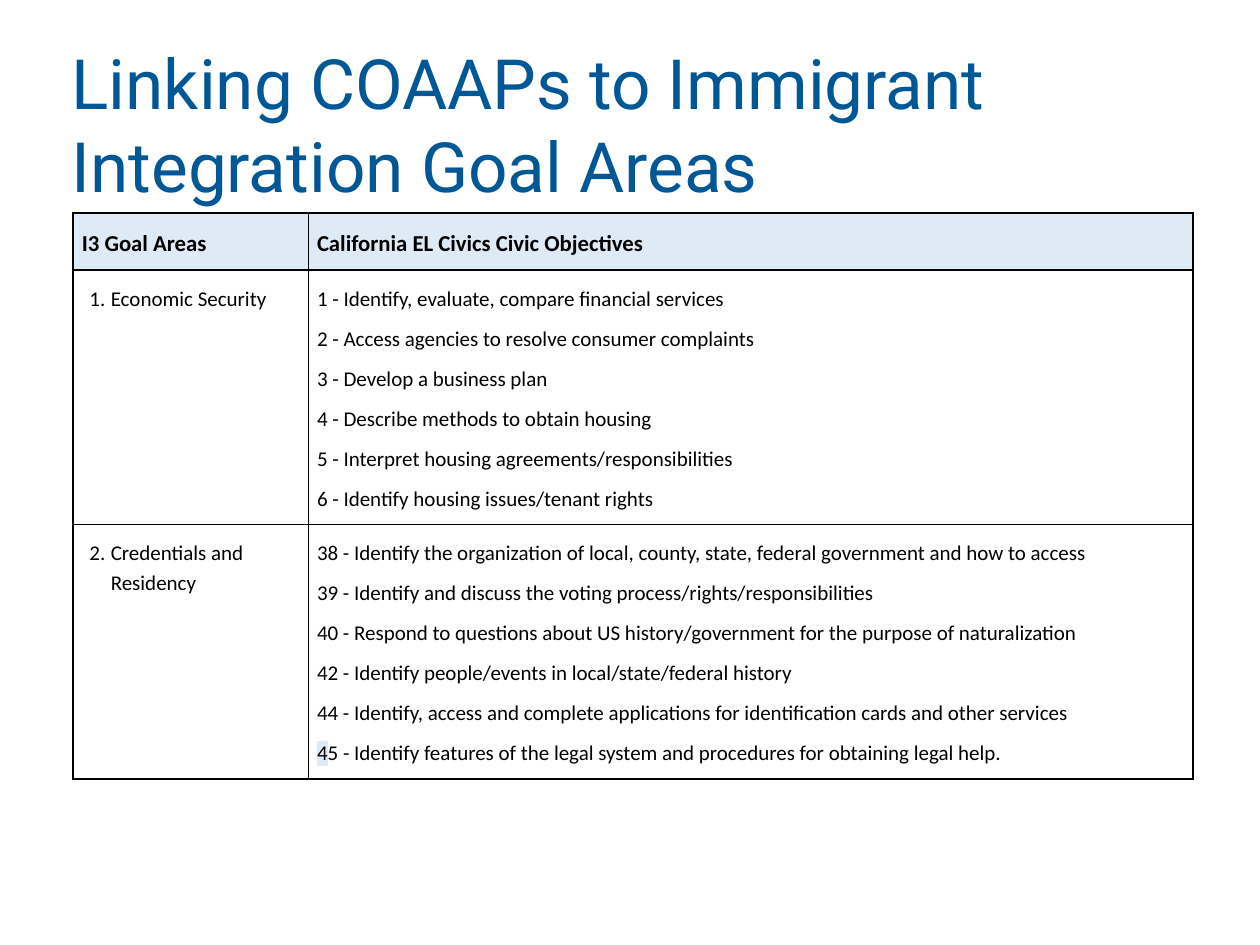
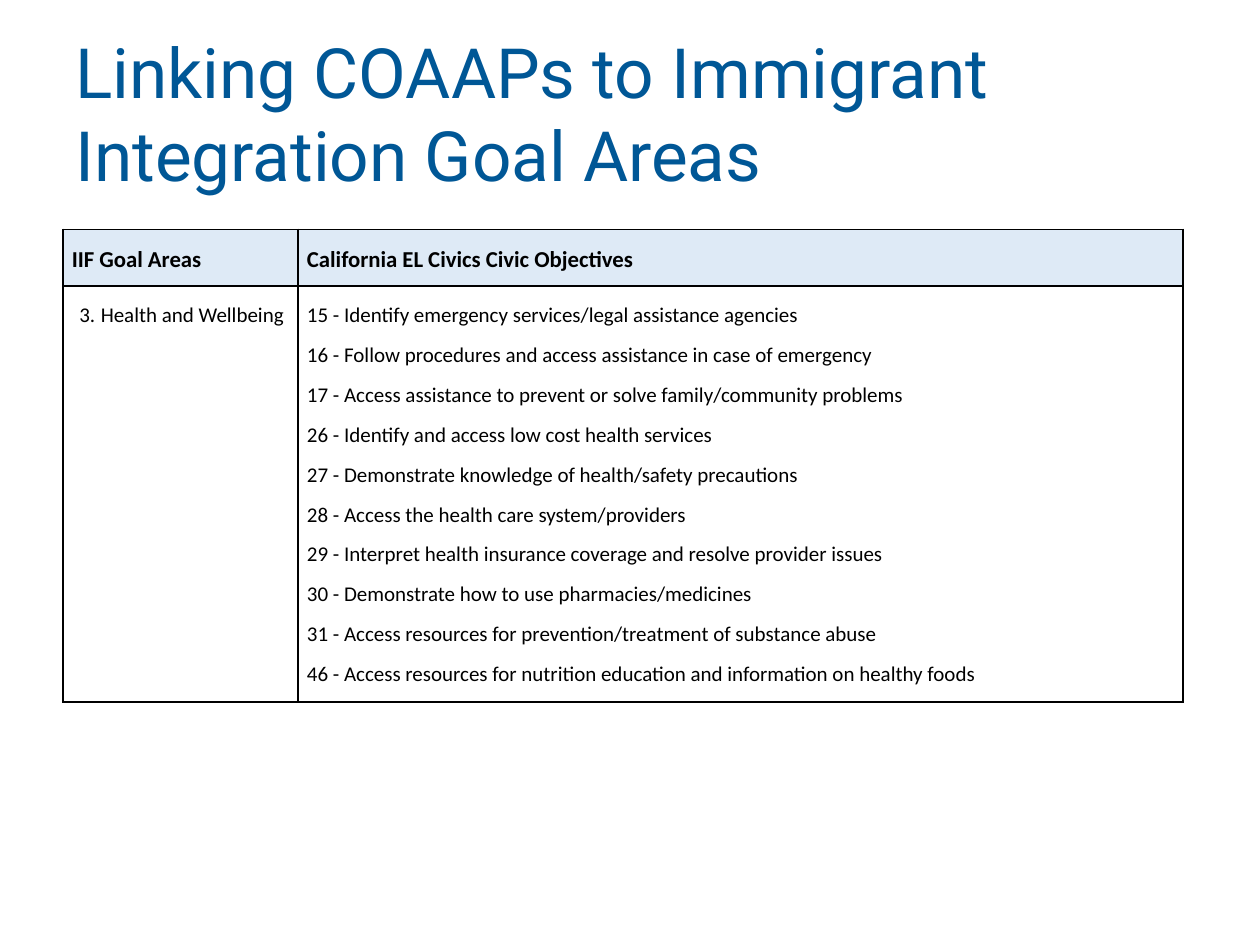
import pptx
import pptx.dml.color
import pptx.enum.text
import pptx.oxml
import pptx.oxml.ns
import pptx.util
from collections import namedtuple
from dataclasses import dataclass

Pt = pptx.util.Pt
qn = pptx.oxml.ns.qn
Box = namedtuple("Box", "left top width height")


@dataclass(frozen=True)
class Theme:
    title_color: str = "005796"
    text_color: str = "000000"
    tint: str = "DEEAF6"
    title_font: str = "Roboto"
    body_font: str = "Calibri"
    title_size: float = 39.6
    header_size: float = 13
    body_size: float = 12
    border: float = 1


THEME = Theme()
TITLE = "Linking COAAPs to Immigrant Integration Goal Areas"
OBJECTIVES_HEADER = "California EL Civics Civic Objectives"

# Lengths are in hundredths of the slide's width.
GOAL_SHARE = 0.21
HEADER_ROW, LINE_PITCH, ROW_PADDING = 4.5, 3.2, 1
TITLE_INSET = (1, 1, 1, 1)
CELL_INSET = (0.7, 1, 0.7, 1)
LIST_INDENT, LIST_HANG = 2.3, 1.7

SLIDES = [
    dict(
        title_box=Box(4.7, 2.2, 90, 8.8),
        table_box=Box(5.8, 16.9, 88.9, 44.7),
        goal_header="I3 Goal Areas",
        tinted="45",
        goals=[
            ("1.", "Economic Security", [
                "1 - Identify, evaluate, compare financial services",
                "2 - Access agencies to resolve consumer complaints",
                "3 - Develop a business plan",
                "4 - Describe methods to obtain housing",
                "5 - Interpret housing agreements/responsibilities",
                "6 - Identify housing issues/tenant rights",
            ]),
            ("2.", "Credentials and Residency", [
                "38 - Identify the organization of local, county, state, federal government and how to access",
                "39 - Identify and discuss the voting process/rights/responsibilities",
                "40 - Respond to questions about US history/government for the purpose of naturalization",
                "42 - Identify people/events in local/state/federal history",
                "44 - Identify, access and complete applications for identification cards and other services",
                "45 - Identify features of the legal system and procedures for obtaining legal help.",
            ]),
        ],
    ),
    dict(
        title_box=Box(5, 1.3, 90, 11.7),
        table_box=Box(5, 18.2, 88.9, 37),
        goal_header="IIF Goal Areas",
        tinted=None,
        goals=[
            ("3.", "Health and Wellbeing", [
                "15 - Identify emergency services/legal assistance agencies",
                "16 - Follow procedures and access assistance in case of emergency",
                "17 - Access assistance to prevent or solve family/community problems",
                "26 - Identify and access low cost health services",
                "27 - Demonstrate knowledge of health/safety precautions",
                "28 - Access the health care system/providers",
                "29 - Interpret health insurance coverage and resolve provider issues",
                "30 - Demonstrate how to use pharmacies/medicines",
                "31 - Access resources for prevention/treatment of substance abuse",
                "46 - Access resources for nutrition education and information on healthy foods",
            ]),
        ],
    ),
]


def units(n):
    return pptx.util.Inches(n / 10)


def rgb(value):
    return pptx.dml.color.RGBColor.from_string(value)


def set_attrs(target, **values):
    for name, value in values.items():
        setattr(target, name, value)


def set_insets(target, insets):
    sides = ("margin_left", "margin_top", "margin_right", "margin_bottom")
    set_attrs(target, **{side: units(n) for side, n in zip(sides, insets)})


def add_run(p, text, font, size, color, bold=False):
    r = p.add_run()
    r.text = text
    set_attrs(r.font, name=font, size=Pt(size), bold=bold)
    r.font.color.rgb = rgb(color)
    return r


def add_body_run(p, text, size=THEME.body_size, bold=False):
    return add_run(p, text, THEME.body_font, size, THEME.text_color, bold)


def highlight(r, color):
    mark = pptx.oxml.parse_xml(
        f'<a:highlight {pptx.oxml.ns.nsdecls("a")}><a:srgbClr val="{color}"/></a:highlight>')
    r.font._element.find(qn("a:solidFill")).addnext(mark)


def add_title(slide, box):
    sp = slide.shapes.add_textbox(*map(units, box))
    tf = sp.text_frame
    set_attrs(tf, word_wrap=True, vertical_anchor=pptx.enum.text.MSO_ANCHOR.TOP)
    set_insets(tf, TITLE_INSET)
    add_run(tf.paragraphs[0], TITLE, THEME.title_font, THEME.title_size, THEME.title_color)


def style_cell(cell, fill=None):
    set_insets(cell, CELL_INSET)
    if fill:
        cell.fill.solid()
        cell.fill.fore_color.rgb = rgb(fill)
    else:
        cell.fill.background()
    tcPr = cell._tc.get_or_add_tcPr()
    for i, side in enumerate("LRTB"):
        tcPr.insert(i, pptx.oxml.parse_xml(
            f'<a:ln{side} {pptx.oxml.ns.nsdecls("a")} w="{Pt(THEME.border)}">'
            f'<a:solidFill><a:srgbClr val="{THEME.text_color}"/></a:solidFill></a:ln{side}>'))


def fill_header(cell, text):
    style_cell(cell, THEME.tint)
    p = cell.text_frame.paragraphs[0]
    set_attrs(p, line_spacing=1.15, space_after=Pt(6))
    add_body_run(p, text, THEME.header_size, True)


def fill_goal(cell, number, name):
    style_cell(cell)
    p = cell.text_frame.paragraphs[0]
    set_attrs(p, line_spacing=1.15, space_after=Pt(3))
    pPr = p._p.get_or_add_pPr()
    pPr.set("marL", str(units(LIST_INDENT)))
    pPr.set("indent", str(-units(LIST_HANG)))
    add_body_run(p, f"{number}\t{name}")


def fill_objectives(cell, objectives, tinted):
    """List the objectives, tinting the first digit of the one numbered tinted."""
    style_cell(cell)
    tf = cell.text_frame
    for i, text in enumerate(objectives):
        p = tf.add_paragraph() if i else tf.paragraphs[0]
        set_attrs(p, line_spacing=1.15, space_before=Pt(6 if i else 0))
        if tinted and text.startswith(tinted):
            highlight(add_body_run(p, text[0]), THEME.tint)
            text = text[1:]
        add_body_run(p, text)
    p.space_after = Pt(6)


def add_goal_table(slide, box, goal_header, goals, tinted):
    table = slide.shapes.add_table(len(goals) + 1, 2, *map(units, box)).table
    set_attrs(table, first_row=False, horz_banding=False)
    for column, share in zip(table.columns, (GOAL_SHARE, 1 - GOAL_SHARE)):
        column.width = units(box.width * share)
    table.rows[0].height = units(HEADER_ROW)
    fill_header(table.cell(0, 0), goal_header)
    fill_header(table.cell(0, 1), OBJECTIVES_HEADER)
    for row, (number, name, objectives) in enumerate(goals, 1):
        table.rows[row].height = units(ROW_PADDING + LINE_PITCH * len(objectives))
        fill_goal(table.cell(row, 0), number, name)
        fill_objectives(table.cell(row, 1), objectives, tinted)


def add_goal_slide(prs, title_box, table_box, **content):
    slide = prs.slides.add_slide(prs.slide_layouts[6])
    add_goal_table(slide, table_box, **content)
    add_title(slide, title_box)


def main():
    prs = pptx.Presentation()
    set_attrs(prs, slide_width=units(100), slide_height=units(75))
    for content in SLIDES:
        add_goal_slide(prs, **content)
    prs.save("out.pptx")


if __name__ == "__main__":
    main()
